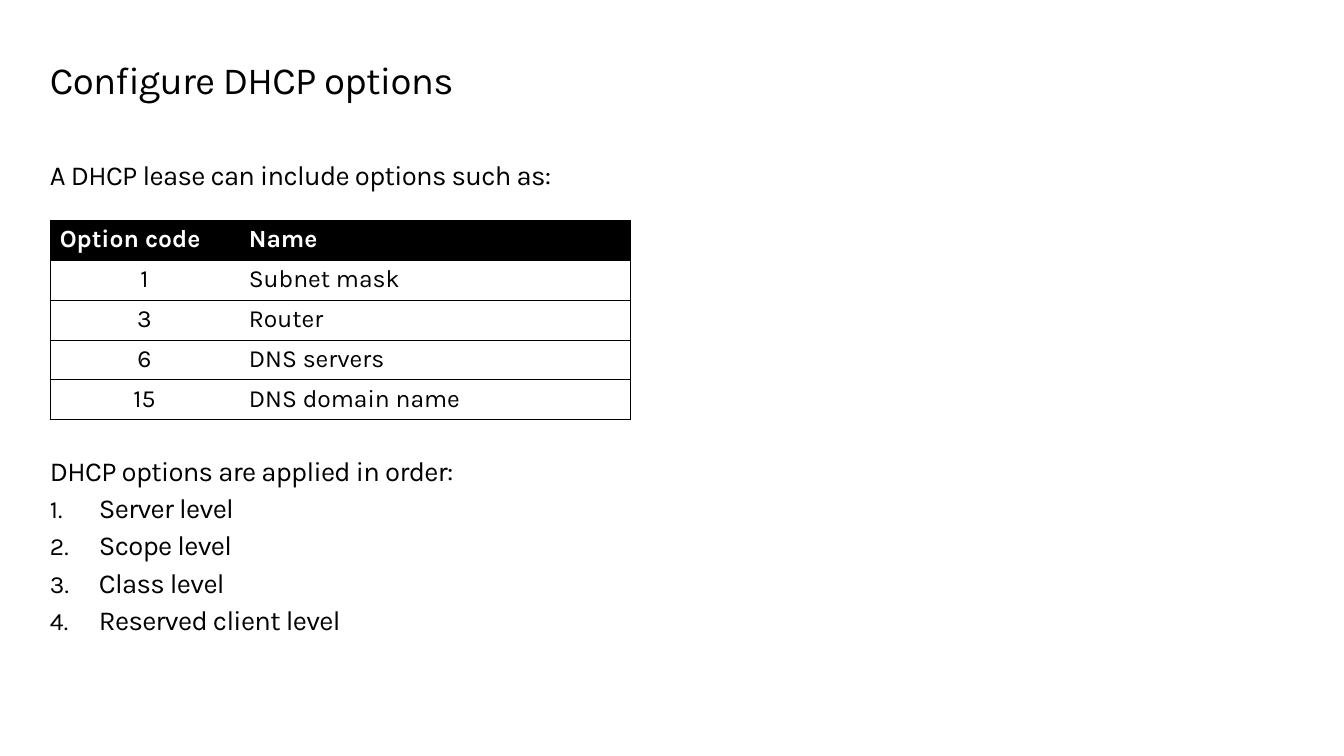
from lxml.etree import SubElement
from pptx import Presentation
from pptx.dml.color import RGBColor
from pptx.enum.text import MSO_ANCHOR, MSO_AUTO_SIZE, PP_ALIGN
from pptx.oxml.ns import qn
from pptx.util import Emu, Pt

EMU_PER_PX = 9255
BLACK, WHITE = "000000", "FFFFFF"

OPTIONS = [
    ("Option code", "Name"),
    ("1", "Subnet mask"),
    ("3", "Router"),
    ("6", "DNS servers"),
    ("15", "DNS domain name"),
]
LEVELS = ["Server level", "Scope level", "Class level", "Reserved client level"]


def px(length):
    return Emu(length * EMU_PER_PX)


def colour(value):
    return RGBColor.from_string(value)


def write(paragraph, text, size=20, font="Karla", ink=BLACK, bold=False,
          align=PP_ALIGN.LEFT, before=0, line=1.0, tracking=0):
    paragraph.alignment = align
    paragraph.line_spacing = line
    paragraph.space_before = Pt(before)
    run = paragraph.add_run()
    run.text = text
    run.font.name = font
    run.font.size = Pt(size)
    run.font.bold = bold
    run.font.color.rgb = colour(ink)
    if tracking:
        run.font._element.set("spc", str(tracking))


def set_marker(paragraph, indent=0, numbered=False):
    properties = paragraph._p.get_or_add_pPr()
    properties.set("marL", str(px(indent)))
    properties.set("indent", str(-px(indent)))
    if numbered:
        SubElement(properties, qn("a:buSzPct"), val="90000")
        SubElement(properties, qn("a:buFont"), typeface="Karla")
        SubElement(properties, qn("a:buAutoNum"), type="arabicPeriod")
    else:
        SubElement(properties, qn("a:buNone"))


def set_borders(cell, visible):
    properties = cell._tc.get_or_add_tcPr()
    for side in "LRTB":
        border = SubElement(properties, qn(f"a:ln{side}"), w=str(Pt(0.75)))
        if side in visible:
            fill = SubElement(border, qn("a:solidFill"))
            SubElement(fill, qn("a:srgbClr"), val=BLACK)
        else:
            SubElement(border, qn("a:noFill"))


class SlideBuilder:
    tracking = -50

    def __init__(self, presentation):
        self.slide = presentation.slides.add_slide(presentation.slide_layouts[1])

    def place(self, holder, left, top, width, height, bottom_inset=0):
        holder.left, holder.top = px(left), px(top)
        holder.width, holder.height = px(width), px(height)
        frame = holder.text_frame
        frame.margin_left = frame.margin_top = 0
        frame.margin_right, frame.margin_bottom = px(10), px(bottom_inset)
        frame.vertical_anchor = MSO_ANCHOR.TOP
        frame.auto_size = MSO_AUTO_SIZE.NONE
        frame.word_wrap = True
        return frame

    def title(self, text, *box):
        frame = self.place(self.slide.shapes.title, *box)
        write(frame.paragraphs[0], text, size=28, line=0.9, tracking=self.tracking)

    def body(self, intro, order_heading, levels, *box):
        frame = self.place(self.slide.placeholders[1], *box, bottom_inset=5)
        lines = [(intro, 12, False), (order_heading, 192, False)]
        lines += [(level, 3, True) for level in levels]
        for index, (text, before, numbered) in enumerate(lines):
            paragraph = frame.add_paragraph() if index else frame.paragraphs[0]
            write(paragraph, text, before=before, tracking=self.tracking)
            set_marker(paragraph, indent=49 if numbered else 0, numbered=numbered)

    def table(self, rows, left, top, widths, row_height):
        table = self.slide.shapes.add_table(
            len(rows), len(widths), px(left), px(top),
            px(sum(widths)), px(row_height * len(rows))).table
        table.horz_banding = False
        for column, width in zip(table.columns, widths):
            column.width = px(width)
        for row_index, values in enumerate(rows):
            table.rows[row_index].height = px(row_height)
            header = row_index == 0
            for column_index, value in enumerate(values):
                cell = table.cell(row_index, column_index)
                first = column_index == 0
                set_borders(cell, "LTB" if first else "RTB")
                cell.fill.solid()
                cell.fill.fore_color.rgb = colour(BLACK if header else WHITE)
                write(cell.text_frame.paragraphs[0], value, size=18, bold=header,
                      ink=WHITE if header else BLACK,
                      align=PP_ALIGN.CENTER if first and not header else PP_ALIGN.LEFT)


def main():
    presentation = Presentation()
    presentation.slide_width, presentation.slide_height = px(1344), px(756)
    builder = SlideBuilder(presentation)
    builder.title("Configure DHCP options", 50, 61, 1246, 44)
    builder.body("A DHCP lease can include options such as:",
                 "DHCP options are applied in order:", LEVELS, 50, 158, 1247, 549)
    builder.table(OPTIONS, 50, 220, [189, 392], 40)
    presentation.save("out.pptx")


if __name__ == "__main__":
    main()
